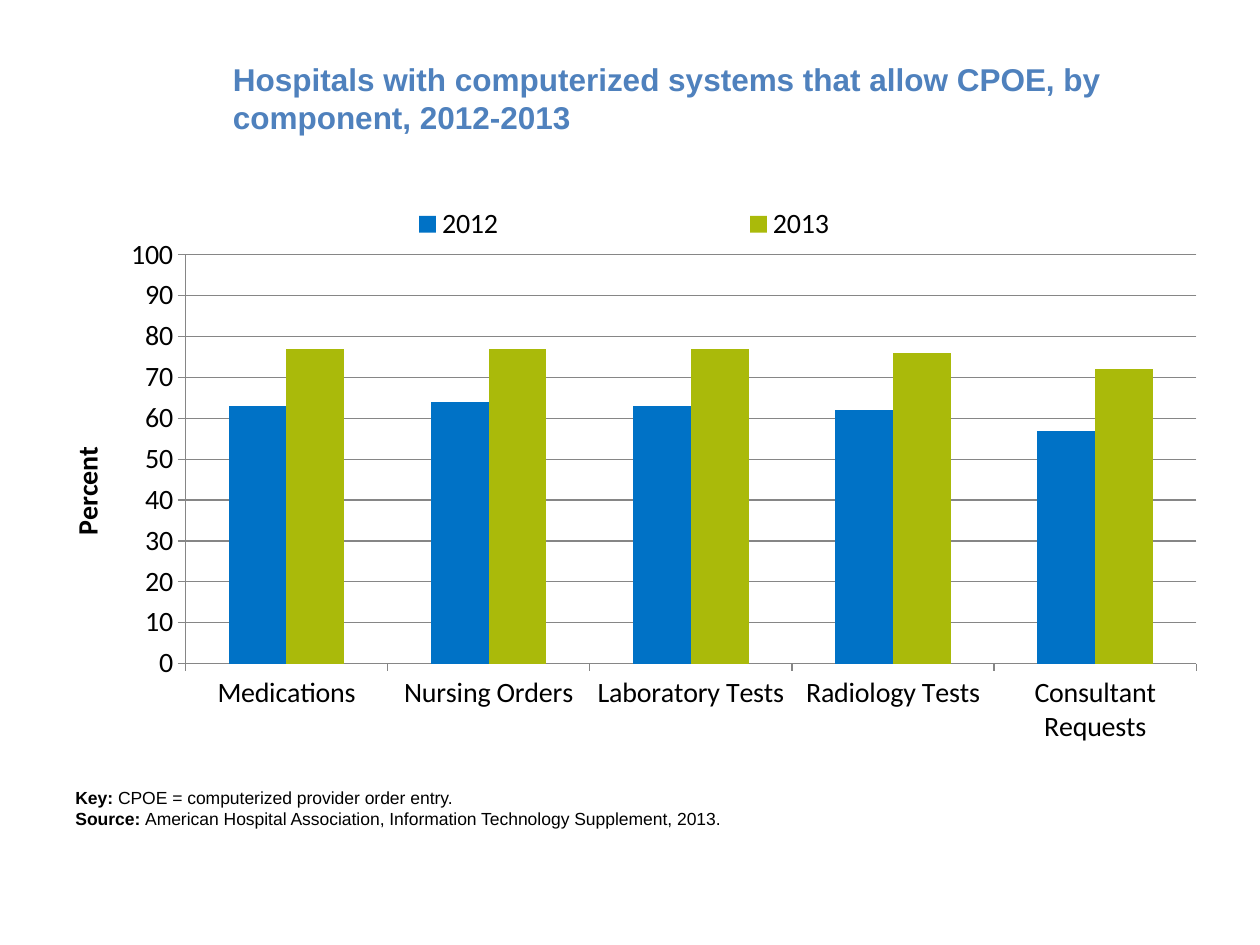
from lxml.etree import SubElement
from pptx import Presentation
from pptx.chart.data import CategoryChartData
from pptx.dml.color import RGBColor
from pptx.enum.chart import XL_CHART_TYPE, XL_LEGEND_POSITION, XL_TICK_MARK
from pptx.enum.text import MSO_ANCHOR
from pptx.oxml.ns import qn
from pptx.util import Pt

BLACK = RGBColor(0x00, 0x00, 0x00)
TITLE_BLUE = RGBColor(0x4F, 0x81, 0xBD)
BLUE = RGBColor(0x00, 0x72, 0xC6)
GREEN = RGBColor(0xAA, 0xBA, 0x0A)
GRAY = RGBColor(0x86, 0x86, 0x86)

# Content
TITLE = "Hospitals with computerized systems that allow CPOE, by component, 2012-2013"
COMPONENTS = ["Medications", "Nursing Orders", "Laboratory Tests",
              "Radiology Tests", "Consultant Requests"]
YEARS = [("2012", BLUE, [63, 64, 63, 62, 57]),
         ("2013", GREEN, [77, 77, 77, 76, 72])]
NOTES = [("Key:", " CPOE = computerized provider order entry."),
         ("Source: ", "American Hospital Association, Information Technology Supplement, 2013.")]


def style(font, size, name, color=BLACK, bold=False):
    font.size, font.name, font.bold = Pt(size), name, bold
    font.color.rgb = color


def add_text(slide, box, paragraphs, size, color=BLACK, anchor=MSO_ANCHOR.TOP):
    """Paragraphs are lists of (text, bold) runs."""
    frame = slide.shapes.add_textbox(*map(Pt, box)).text_frame
    frame.word_wrap = True
    frame.vertical_anchor = anchor
    for i, runs in enumerate(paragraphs):
        paragraph = frame.paragraphs[0] if i == 0 else frame.add_paragraph()
        for text, bold in runs:
            run = paragraph.add_run()
            run.text = text
            style(run.font, size, "Arial", color, bold)


def manual_layout(x, y, w, h, inner=False):
    """Build a chart layout from fractions of the chart size."""
    layout = SubElement(SubElement(CHART_ROOT, qn("c:layout")), qn("c:manualLayout"))
    settings = [("layoutTarget", "inner")] if inner else []
    settings += [("xMode", "edge"), ("yMode", "edge"),
                 ("x", x), ("y", y), ("w", w), ("h", h)]
    for tag, value in settings:
        SubElement(layout, qn(f"c:{tag}")).set("val", str(value))
    return layout.getparent()


prs = Presentation()
prs.slide_width, prs.slide_height = Pt(720), Pt(540)
slide = prs.slides.add_slide(prs.slide_layouts[6])

# Title
add_text(slide, (126, 21.6, 558, 68.4), [[(TITLE, True)]], 18, TITLE_BLUE, MSO_ANCHOR.MIDDLE)

# Chart
data = CategoryChartData(number_format="0")
data.categories = COMPONENTS
for year, _, percents in YEARS:
    data.add_series(year, percents)
chart = slide.shapes.add_chart(XL_CHART_TYPE.COLUMN_CLUSTERED,
                               Pt(36), Pt(115.2), Pt(648), Pt(324), data).chart
style(chart.font, 10, "Arial")
chart.has_title = False
CHART_ROOT = chart.plots[0]._element.getparent()

plot = chart.plots[0]
plot.gap_width, plot.overlap = 150, 0
plot.vary_by_categories = False
for series, (_, color, _) in zip(plot.series, YEARS):
    series.format.fill.solid()
    series.format.fill.fore_color.rgb = color
    series.invert_if_negative = False

# Axes
percent_axis = chart.value_axis
for axis in (chart.category_axis, percent_axis):
    style(axis.tick_labels.font, 16, "Calibri")
    axis.major_tick_mark = XL_TICK_MARK.OUTSIDE
    axis.minor_tick_mark = XL_TICK_MARK.NONE
    axis.format.line.color.rgb = GRAY
    axis.format.line.width = Pt(0.75)
percent_axis.minimum_scale, percent_axis.maximum_scale = 0, 100
percent_axis.major_unit = 10
percent_axis.tick_labels.number_format = "0"
percent_axis.tick_labels.number_format_is_linked = False
percent_axis.has_major_gridlines = True
percent_axis.major_gridlines.format.line.color.rgb = GRAY
percent_axis.major_gridlines.format.line.width = Pt(0.75)
percent_label = percent_axis.axis_title.text_frame.paragraphs[0].add_run()
percent_label.text = "Percent"
style(percent_label.font, 16, "Calibri", bold=True)

# Legend spread over the top of the plot
chart.has_legend = True
legend = chart.legend
legend.position = XL_LEGEND_POSITION.TOP
legend.include_in_layout = False
style(legend.font, 16, "Calibri")
for old in legend._element.findall(qn("c:layout")):
    legend._element.remove(old)
legend._element.find(qn("c:legendPos")).addnext(manual_layout(0.1, 0, 0.79, 0.08))

# Plot position
for old in CHART_ROOT.findall(qn("c:layout")):
    CHART_ROOT.remove(old)
CHART_ROOT.insert(0, manual_layout(0.108, 0.094, 0.892, 0.721, inner=True))

# Notes
add_text(slide, (36, 446.4, 624, 31.5),
         [[(label, True), (note, False)] for label, note in NOTES], 10)

prs.save("out.pptx")
